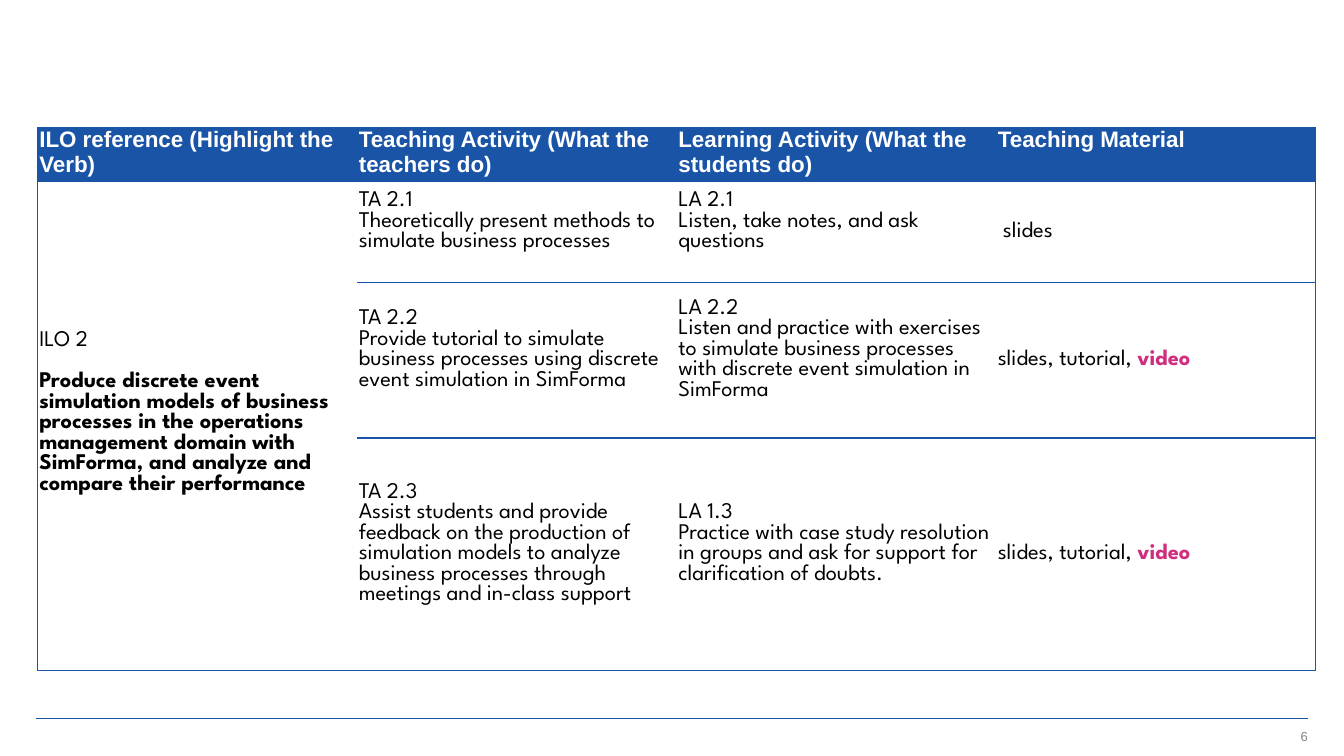
from lxml import etree
from pptx import Presentation
from pptx.dml.color import RGBColor
from pptx.enum.shapes import MSO_CONNECTOR
from pptx.enum.text import MSO_ANCHOR, PP_ALIGN
from pptx.oxml.ns import qn
from pptx.util import Inches, Pt

STRAIGHT = MSO_CONNECTOR.STRAIGHT
TOP, MIDDLE = MSO_ANCHOR.TOP, MSO_ANCHOR.MIDDLE
LEFT, RIGHT = PP_ALIGN.LEFT, PP_ALIGN.RIGHT

COLORS = {"blue": "1954A6", "white": "FFFFFF", "black": "000000",
          "pink": "D02F80", "gray": "848489"}
HEADING_FONT, BODY_FONT = "Arial", "League Spartan"
LINE_PT = 14.8  # height of one body line

HEADINGS = ["ILO reference (Highlight the Verb)",
            "Teaching Activity (What the teachers do)",
            "Learning Activity (What the students do)",
            "Teaching Material"]
OUTCOME = ["ILO 2",
           "Produce discrete event simulation models of business processes in "
           "the operations management domain with SimForma, and analyze and "
           "compare their performance"]
ACTIVITIES = [
    (["TA 2.1", "Theoretically present methods to simulate business processes"],
     ["LA 2.1", "Listen, take notes, and ask questions"]),
    (["TA 2.2", "Provide tutorial to simulate business processes using "
                "discrete event simulation in SimForma"],
     ["LA 2.2", "Listen and practice with exercises to simulate business "
                "processes with discrete event simulation in SimForma"]),
    (["TA 2.3", "Assist students and provide feedback on the production of "
                "simulation models to analyze business processes through "
                "meetings and in-class support"],
     ["LA 1.3", "Practice with case study resolution in groups and ask for "
                "support for clarification of doubts."]),
]
MATERIALS = ["slides", "slides, tutorial, ", "slides, tutorial, "]


def write(paragraph, text, font=BODY_FONT, size=16, color="black", bold=False,
          align=LEFT, after=0):
    paragraph.alignment = align
    paragraph.space_after = Pt(after)
    run = paragraph.add_run()
    run.text = text
    run.font.name, run.font.size, run.font.bold = font, Pt(size), bold
    run.font.color.rgb = RGBColor.from_string(COLORS[color])


class SlideBuilder:
    """Places elements on one slide; positions are percentages of its size."""

    def __init__(self, width, height):
        self.deck = Presentation()
        self.deck.slide_width, self.deck.slide_height = Inches(width), Inches(height)
        self.slide = self.deck.slides.add_slide(self.deck.slide_layouts[6])

    def x(self, percent):
        return round(self.deck.slide_width * percent / 100)

    def y(self, percent):
        return round(self.deck.slide_height * percent / 100)

    def rule(self, left, right, top):
        line = self.slide.shapes.add_connector(
            STRAIGHT, self.x(left), self.y(top), self.x(right), self.y(top))
        line.line.color.rgb = RGBColor.from_string(COLORS["blue"])
        line.line.width = Pt(1)
        etree.SubElement(line._element.spPr, qn("a:effectLst"))

    def label(self, left, top, width, height, text, **style):
        frame = self.slide.shapes.add_textbox(
            self.x(left), self.y(top), self.x(width), self.y(height)).text_frame
        frame.margin_left = frame.margin_right = 0
        frame.margin_top = frame.margin_bottom = 0
        frame.word_wrap = True
        frame.vertical_anchor = MIDDLE
        write(frame.paragraphs[0], text, **style)

    def table(self, left, top, width, columns, row_heights):
        grid = self.slide.shapes.add_table(
            len(row_heights), columns, self.x(left), self.y(top),
            self.x(width), self.y(sum(row_heights))).table
        grid.first_row = grid.horz_banding = False
        for column in grid.columns:
            column.width = self.x(width / columns)
        for row, height in zip(grid.rows, row_heights):
            row.height = self.y(height)
        for r in range(len(row_heights)):
            for c in range(columns):
                self.paint(grid.cell(r, c), "white" if r else "blue",
                           {"lnL": c == 0, "lnR": c == columns - 1,
                            "lnT": True, "lnB": True})
        return grid

    def paint(self, cell, fill, edges):
        """Fill a cell and draw or hide each of its edges."""
        properties = cell._tc.get_or_add_tcPr()
        for edge, shown in edges.items():
            line = etree.SubElement(properties, qn(f"a:{edge}"), w=str(Pt(1)))
            if shown:
                solid = etree.SubElement(line, qn("a:solidFill"))
                etree.SubElement(solid, qn("a:srgbClr"), val=COLORS["blue"])
            else:
                etree.SubElement(line, qn("a:noFill"))
        cell.fill.solid()
        cell.fill.fore_color.rgb = RGBColor.from_string(COLORS[fill])

    def fill_cell(self, cell, lines, anchor=MIDDLE, indent=0.02, below=0.0):
        """Write (text, style) lines; below is the room kept under them, in inches."""
        cell.vertical_anchor = anchor
        cell.margin_left, cell.margin_right = Inches(indent), Inches(0.02)
        cell.margin_top, cell.margin_bottom = 0, Inches(below)
        frame = cell.text_frame
        for i, (text, style) in enumerate(lines):
            paragraph = frame.add_paragraph() if i else frame.paragraphs[0]
            write(paragraph, text, **style)


def main():
    page = SlideBuilder(13.33, 7.5)
    page.rule(2.7, 97.3, 95.07)
    page.label(74.8, 96.27, 22.5, 2.27, "6", font=HEADING_FONT, size=9.3,
               color="gray", align=RIGHT)

    plan = page.table(2.78, 16.9, 95.1, 4, [6.8, 12.67, 19.07, 30.8])
    for c, heading in enumerate(HEADINGS):
        style = {"font": HEADING_FONT, "color": "white", "bold": True}
        page.fill_cell(plan.cell(0, c), [(heading, style)], anchor=TOP)

    plan.cell(1, 0).merge(plan.cell(3, 0))
    code, outcome = OUTCOME
    page.fill_cell(plan.cell(1, 0),
                   [(code, {"after": LINE_PT}), (outcome, {"bold": True})],
                   below=0.26)

    for r, (activities, material) in enumerate(zip(ACTIVITIES, MATERIALS), 1):
        for c, lines in enumerate(activities, 1):
            page.fill_cell(plan.cell(r, c), [(line, {}) for line in lines],
                           below=LINE_PT / 72)
        material_cell = plan.cell(r, 3)
        page.fill_cell(material_cell, [(material, {})],
                       indent=0.07 if r == 1 else 0.02)
        if r > 1:
            write(material_cell.text_frame.paragraphs[0], "video",
                  color="pink", bold=True)

    page.deck.save("out.pptx")


if __name__ == "__main__":
    main()
